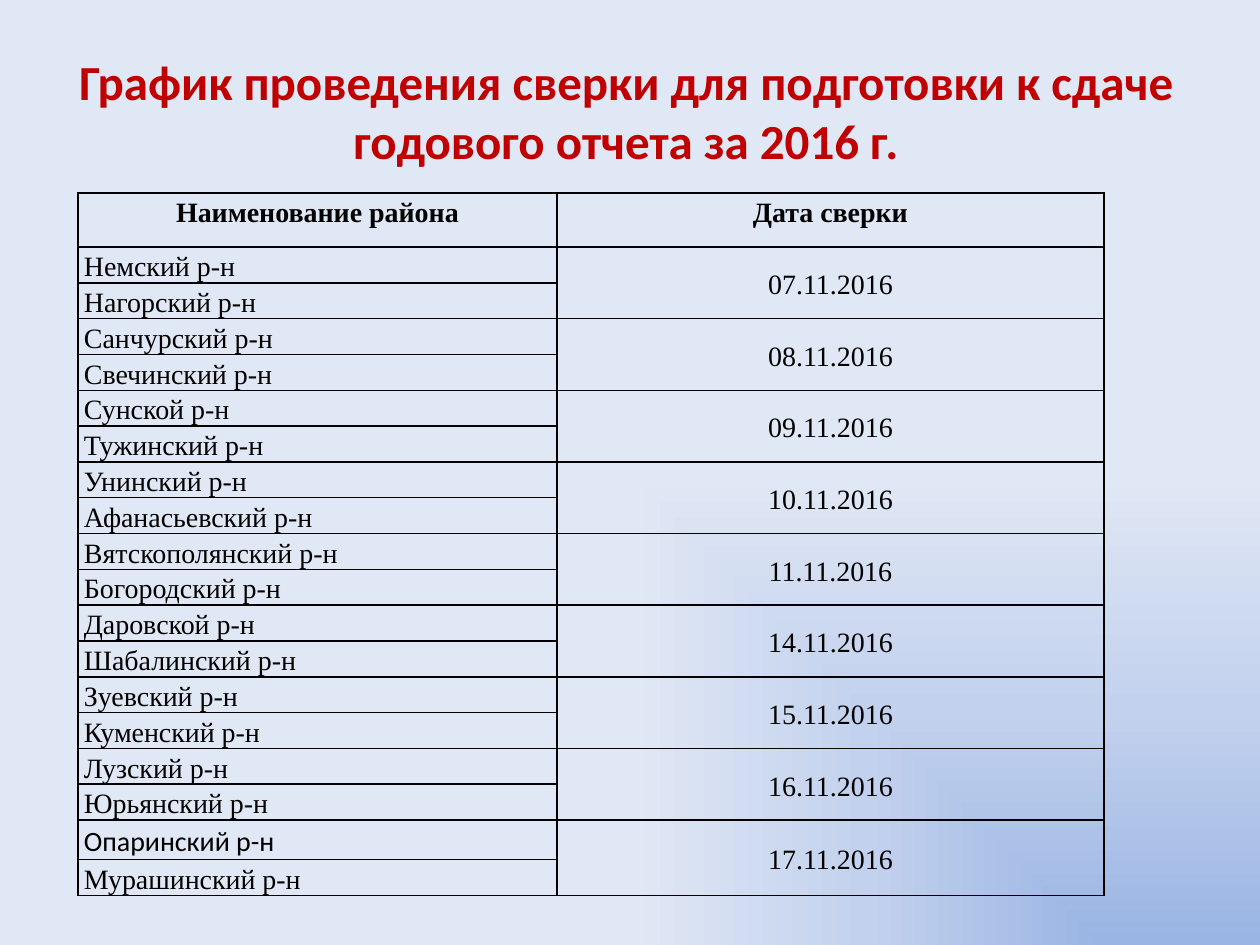
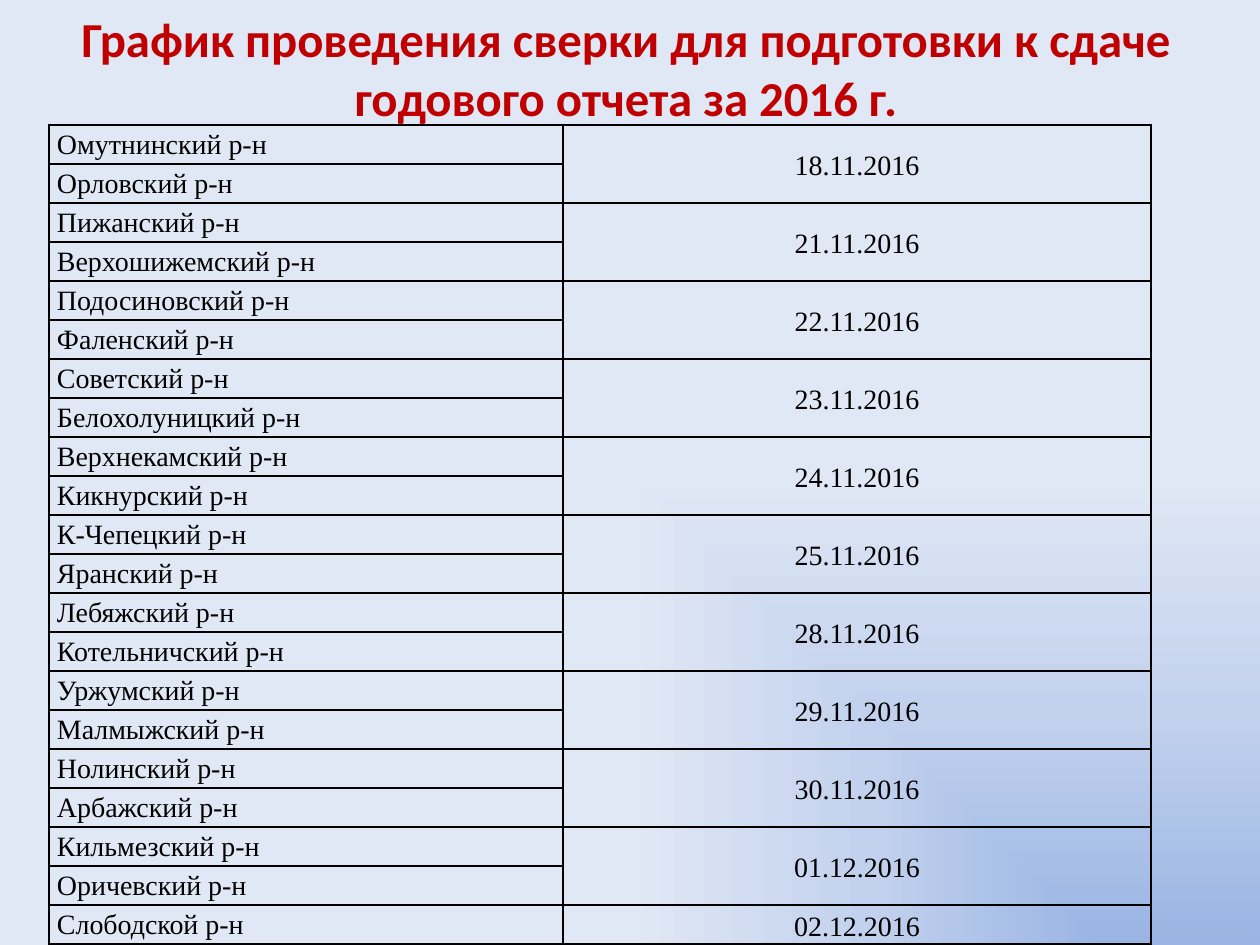
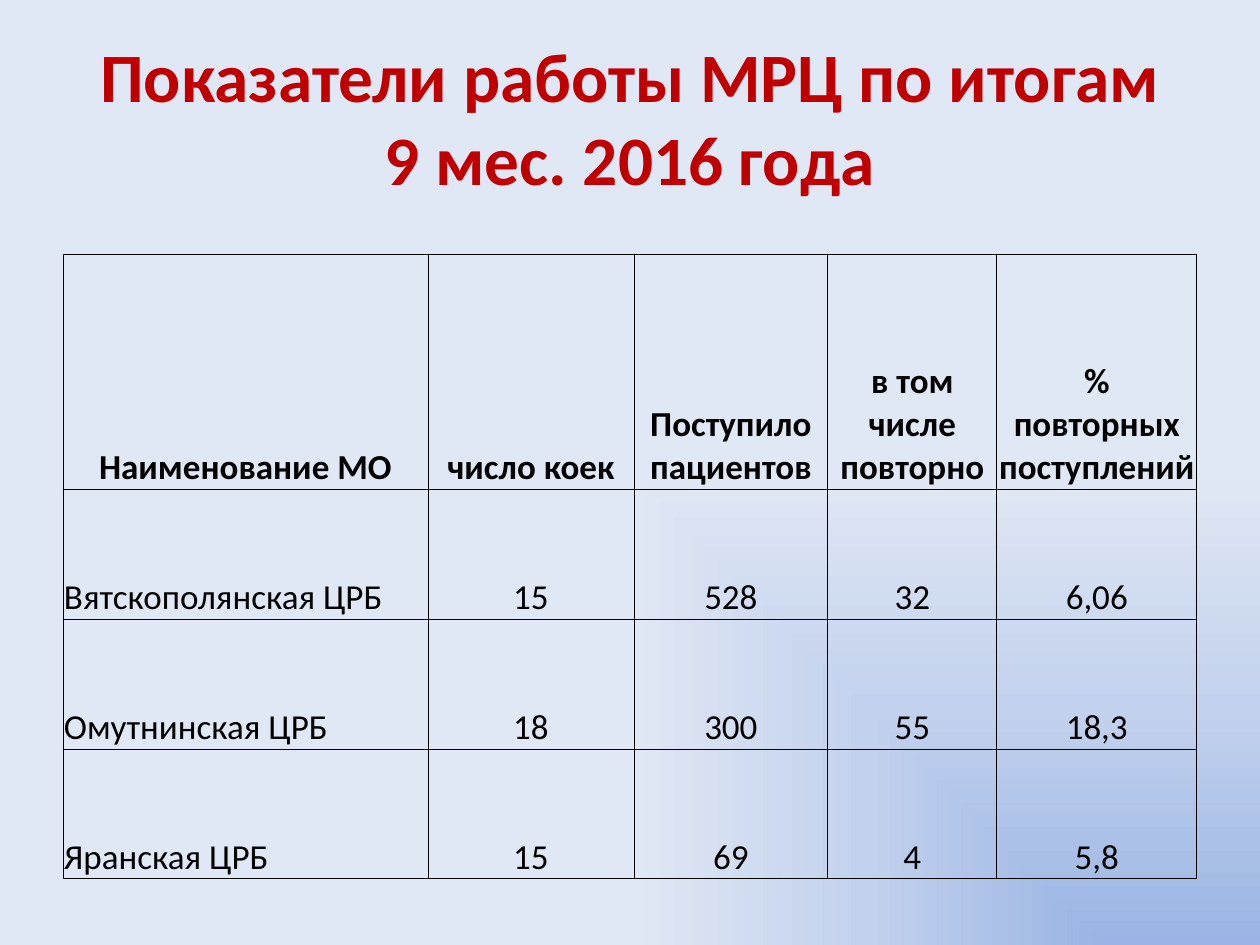
import pptx
import pptx.dml.color
import pptx.enum.text
import pptx.oxml
import pptx.oxml.ns
import pptx.util

EMU_PER_PX = 914400 / 126
RED, BLACK = "C00000", "000000"
CENTER = pptx.enum.text.PP_ALIGN.CENTER
LEFT = pptx.enum.text.PP_ALIGN.LEFT
TOP = pptx.enum.text.MSO_ANCHOR.TOP
MIDDLE = pptx.enum.text.MSO_ANCHOR.MIDDLE
BOTTOM = pptx.enum.text.MSO_ANCHOR.BOTTOM
NAMESPACE = pptx.oxml.ns.nsdecls("a")


def px(length):
    return pptx.util.Emu(round(length * EMU_PER_PX))


def write(frame, text, font, size, color, bold, align, spacing=1.0):
    """Put one paragraph of formatted text into a text frame."""
    frame.text = text
    para = frame.paragraphs[0]
    para.alignment = align
    para.line_spacing = spacing
    for span in para.runs:
        span.font.name = font
        span.font.size = pptx.util.Pt(size)
        span.font.bold = bold
        span.font.color.rgb = pptx.dml.color.RGBColor.from_string(color)


schedule_title = "График проведения сверки для подготовки к сдаче годового отчета за 2016 г."
november_start = [
    ("07.11.2016", "Немский", "Нагорский"),
    ("08.11.2016", "Санчурский", "Свечинский"),
    ("09.11.2016", "Сунской", "Тужинский"),
    ("10.11.2016", "Унинский", "Афанасьевский"),
    ("11.11.2016", "Вятскополянский", "Богородский"),
    ("14.11.2016", "Даровской", "Шабалинский"),
    ("15.11.2016", "Зуевский", "Куменский"),
    ("16.11.2016", "Лузский", "Юрьянский"),
    ("17.11.2016", "Опаринский", "Мурашинский"),
]
november_end = [
    ("18.11.2016", "Омутнинский", "Орловский"),
    ("21.11.2016", "Пижанский", "Верхошижемский"),
    ("22.11.2016", "Подосиновский", "Фаленский"),
    ("23.11.2016", "Советский", "Белохолуницкий"),
    ("24.11.2016", "Верхнекамский", "Кикнурский"),
    ("25.11.2016", "К-Чепецкий", "Яранский"),
    ("28.11.2016", "Лебяжский", "Котельничский"),
    ("29.11.2016", "Уржумский", "Малмыжский"),
    ("30.11.2016", "Нолинский", "Арбажский"),
    ("01.12.2016", "Кильмезский", "Оричевский"),
    ("02.12.2016", "Слободской"),
]

# A None cell continues the cell above it.
schedules = []
for visits in (november_start, november_end):
    rows = []
    for date, *districts in visits:
        for number, district in enumerate(districts):
            rows.append((f"{district} р-н", None if number else date))
    schedules.append(rows)

indicators = [
    ("Наименование МО", "число коек", "Поступило пациентов",
     "в том числе повторно", "% повторных поступлений"),
    ("Вятскополянская ЦРБ", "15", "528", "32", "6,06"),
    ("Омутнинская ЦРБ", "18", "300", "55", "18,3"),
    ("Яранская ЦРБ", "15", "69", "4", "5,8"),
]

schedule_style = dict(font="Times New Roman", size=16, spacing=1.15, line=1,
                      anchors=(TOP, MIDDLE), title=schedule_title)
pages = [
    dict(schedule_style, title_at=(59, 59), title_size=28, title_bottom=60,
         table_at=(78, 193), columns=(479, 547), header_height=54, row_height=29,
         insets=(6, 0), has_header=True,
         rows=[("Наименование района", "Дата сверки")] + schedules[0]),
    dict(schedule_style, title_at=(59, 39), title_size=27.9, title_bottom=106,
         table_at=(49, 125), columns=(514, 588), header_height=39, row_height=39,
         insets=(8, 0), has_header=False, rows=schedules[1]),
    dict(title="Показатели работы МРЦ по итогам 9 мес. 2016 года",
         title_at=(63, 38), title_size=39.6, title_bottom=6,
         table_at=(63, 254), columns=(365, 206, 194, 169, 200),
         header_height=235, row_height=130, insets=(1, 1), has_header=True,
         font="Calibri", size=20, spacing=1.0, line=0.5,
         anchors=(BOTTOM, BOTTOM), rows=indicators),
]

deck = pptx.Presentation()
deck.slide_width, deck.slide_height = px(1260), px(945)

deck.slide_master.background.fill.gradient()
gradient = deck.slide_master.element.find(".//" + pptx.oxml.ns.qn("a:gradFill"))
stops = "".join(
    f'<a:gs pos="{position * 1000}"><a:srgbClr val="{color}"/></a:gs>'
    for position, color in ((0, "9AB5E4"), (50, "C2D1ED"), (100, "E1E8F5")))
gradient.getparent().replace(gradient, pptx.oxml.parse_xml(
    f'<a:gradFill {NAMESPACE} rotWithShape="1"><a:gsLst>{stops}</a:gsLst>'
    '<a:path path="rect"><a:fillToRect l="100000" t="100000"/></a:path></a:gradFill>'))

for content in pages:
    page = deck.slides.add_slide(deck.slide_layouts[5])
    title = page.shapes.title
    title.left, title.top = map(px, content["title_at"])
    title.width, title.height = px(1134), px(157)
    frame = title.text_frame
    frame.word_wrap = True
    frame.auto_size = pptx.enum.text.MSO_AUTO_SIZE.NONE
    frame.vertical_anchor = MIDDLE
    frame.margin_bottom = px(content["title_bottom"])
    write(frame, content["title"], "Calibri", content["title_size"], RED, True, CENTER)

    rows, columns = content["rows"], content["columns"]
    heights = [content["header_height"]] + [content["row_height"]] * (len(rows) - 1)
    left, top = content["table_at"]
    table = page.shapes.add_table(len(rows), len(columns), px(left), px(top),
                                  px(sum(columns)), px(sum(heights))).table
    table.first_row = table.horz_banding = False
    for column, width in zip(table.columns, columns):
        column.width = px(width)
    for row, height in zip(table.rows, heights):
        row.height = px(height)

    side_inset, top_inset = content["insets"]
    first_anchor, other_anchor = content["anchors"]
    for row_index, values in enumerate(rows):
        is_header = content["has_header"] and row_index == 0
        for column_index, value in enumerate(values):
            cell = table.cell(row_index, column_index)
            cell.margin_left = cell.margin_right = px(side_inset)
            cell.margin_top, cell.margin_bottom = px(top_inset), 0
            is_first = column_index == 0
            cell.vertical_anchor = first_anchor if is_header or is_first else other_anchor
            cell.fill.background()
            properties = cell._tc.get_or_add_tcPr()
            for order, side in enumerate(("lnL", "lnR", "lnT", "lnB")):
                properties.insert(order, pptx.oxml.parse_xml(
                    f'<a:{side} {NAMESPACE} w="{pptx.util.Pt(content["line"])}">'
                    f'<a:solidFill><a:srgbClr val="{BLACK}"/></a:solidFill></a:{side}>'))
            if value is None:
                table.cell(row_index - 1, column_index).merge(cell)
                continue
            font = "Calibri" if value == "Опаринский р-н" else content["font"]
            align = LEFT if is_first and not is_header else CENTER
            write(cell.text_frame, value, font, content["size"], BLACK, is_header,
                  align, content["spacing"])

deck.save("out.pptx")
